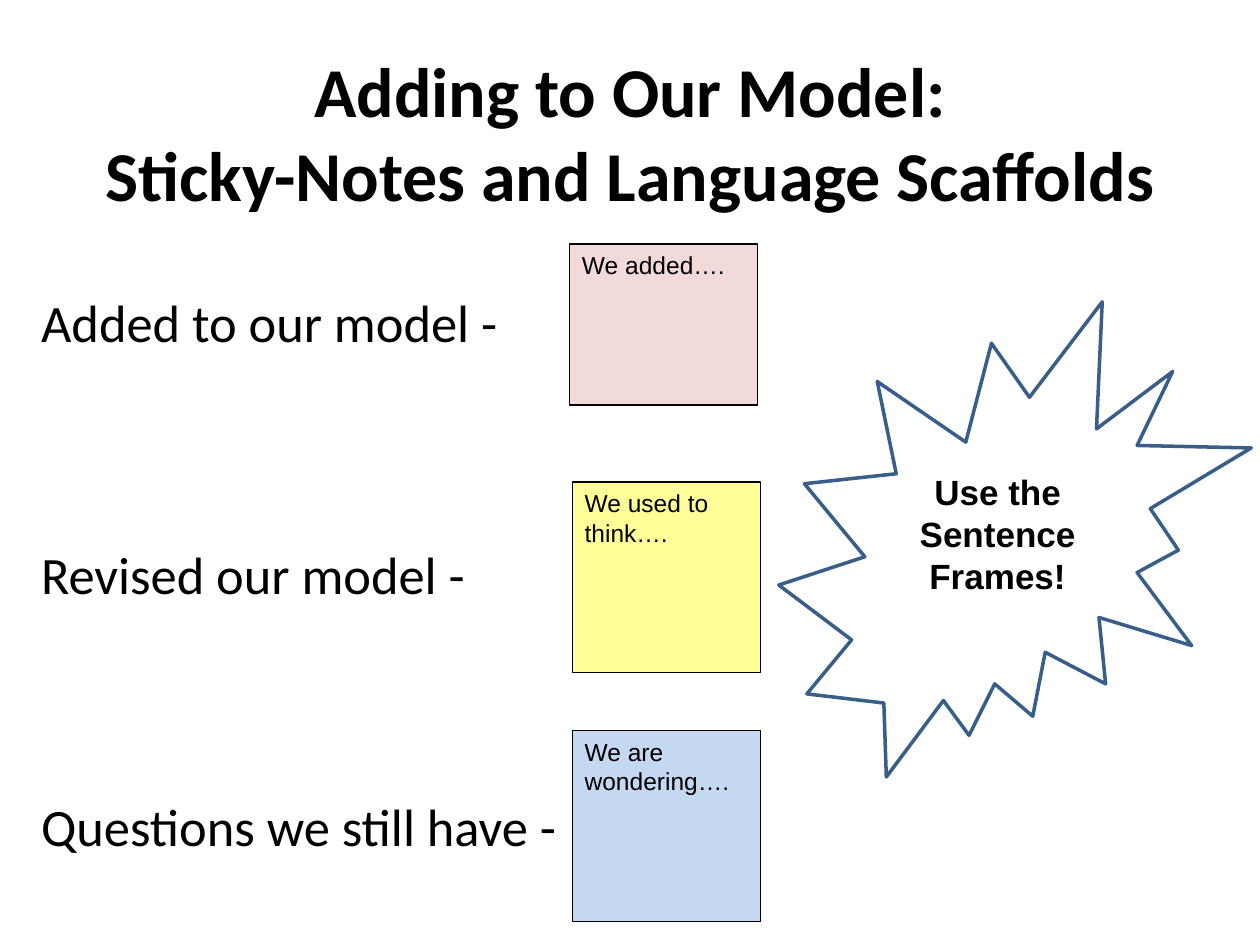
from dataclasses import dataclass

from pptx import Presentation
from pptx.dml.color import RGBColor
from pptx.enum import shapes, text
from pptx.util import Pt

BLACK = "000000"
LABEL_LEFT, LABEL_TOP, LABEL_PITCH = 23.5, 166, 144


@dataclass
class StickyNote:
    label: str
    prompt: str
    fill: str
    left: float
    top: float
    height: float


NOTES = [
    StickyNote("Added to our model -", "We added….", "F2DADA", 325.5, 139.5, 92),
    StickyNote("Revised our model -", "We used to think….", "FFFF99", 327, 275.5, 109),
    StickyNote("Questions we still have -", "We are wondering….", "C5D8F1", 327, 417.5, 109),
]


def color(value: str) -> RGBColor:
    return RGBColor.from_string(value)


def write(shape, words: str, *, size: float, font: str = "Arial", bold: bool = False,
          align=text.PP_ALIGN.LEFT, anchor=text.MSO_ANCHOR.TOP,
          insets: tuple = (7.2, 3.6, 7.2, 3.6)) -> None:
    """Fill the shape with one paragraph; insets are left, top, right, bottom."""
    frame = shape.text_frame
    frame.word_wrap = True
    frame.auto_size = text.MSO_AUTO_SIZE.NONE
    frame.vertical_anchor = anchor
    (frame.margin_left, frame.margin_top,
     frame.margin_right, frame.margin_bottom) = map(Pt, insets)
    para = frame.paragraphs[0]
    para.text = words
    para.alignment = align
    for span in para.runs:
        span.font.size = Pt(size)
        span.font.name = font
        span.font.bold = bold
        span.font.color.rgb = color(BLACK)


def add_outlined(page, kind, left: float, top: float, width: float, height: float,
                 *, fill: str, line: str, weight: float):
    shape = page.shapes.add_shape(kind, Pt(left), Pt(top), Pt(width), Pt(height))
    shape.shadow.inherit = False
    shape.fill.solid()
    shape.fill.fore_color.rgb = color(fill)
    shape.line.color.rgb = color(line)
    shape.line.width = Pt(weight)
    return shape


def add_note(page, note: StickyNote, row: int) -> None:
    """Draw a label and the sticky note beside it."""
    label = page.shapes.add_textbox(Pt(LABEL_LEFT), Pt(LABEL_TOP + row * LABEL_PITCH),
                                    Pt(300), Pt(37))
    write(label, note.label, size=30, font="Calibri", insets=(0, 0, 0, 0))
    paper = add_outlined(page, shapes.MSO_SHAPE.RECTANGLE, note.left, note.top, 107.5,
                         note.height, fill=note.fill, line=BLACK, weight=0.75)
    write(paper, note.prompt, size=14)


def main() -> None:
    deck = Presentation()
    deck.slide_width, deck.slide_height = Pt(720), Pt(540)
    page = deck.slides.add_slide(deck.slide_layouts[5])

    title = page.shapes.title
    title.left, title.top, title.width, title.height = Pt(36), Pt(2), Pt(648), Pt(146)
    write(title, "Adding to Our Model:\vSticky-Notes and Language Scaffolds", size=40,
          font="Calibri", bold=True, align=text.PP_ALIGN.CENTER,
          anchor=text.MSO_ANCHOR.MIDDLE, insets=(7.2, 7.2, 7.2, 7.2))

    for row, note in enumerate(NOTES):
        add_note(page, note, row)

    burst = add_outlined(page, shapes.MSO_SHAPE.EXPLOSION2, 445, 172.5, 270, 271.5,
                         fill="FFFFFF", line="395E8A", weight=2)
    write(burst, "Use the Sentence Frames!", size=20, bold=True,
          align=text.PP_ALIGN.CENTER, anchor=text.MSO_ANCHOR.MIDDLE,
          insets=(7.2, 3.6, 7.2, 19.6))

    deck.save("out.pptx")


if __name__ == "__main__":
    main()
